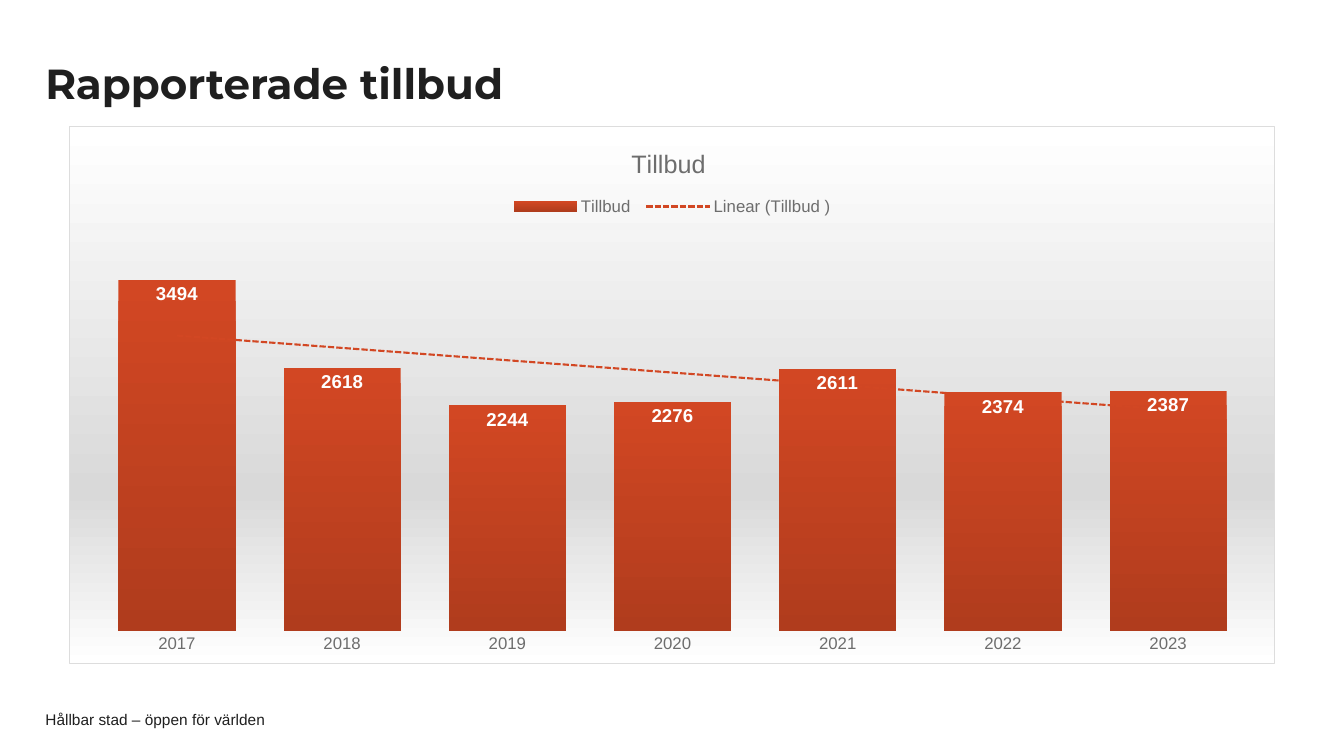
from lxml import etree
from pptx import Presentation
from pptx.chart.data import CategoryChartData
from pptx.dml.color import RGBColor
from pptx.enum.chart import XL_CHART_TYPE, XL_LABEL_POSITION, XL_LEGEND_POSITION, XL_TICK_MARK
from pptx.enum.text import MSO_ANCHOR, PP_ALIGN
from pptx.oxml import parse_xml
from pptx.oxml.ns import nsdecls, qn
from pptx.util import Inches, Pt

COLUMN = XL_CHART_TYPE.COLUMN_CLUSTERED
INSIDE = XL_LABEL_POSITION.INSIDE_END
TOP = XL_LEGEND_POSITION.TOP
NO_TICK = XL_TICK_MARK.NONE
MIDDLE = MSO_ANCHOR.MIDDLE
LEFT = PP_ALIGN.LEFT

WIDTH, HEIGHT = Inches(13.33), Inches(7.5)
MARGIN = 0.45 / 13.33
COLORS = {
    "ink": "1F1F1F", "grey": "6D6D6D", "white": "FFFFFF", "band": "D9D9D9",
    "edge": "DDDDDD", "red": "D24723", "rust": "B03C1D",
}
YEARS = [str(year) for year in range(2017, 2024)]
COUNTS = [3494, 2618, 2244, 2276, 2611, 2374, 2387]
PLOT = {"x": 0.021, "y": 0.191, "w": 0.959, "h": 0.747}


def area(x, y, w, h):
    return [int(part) for part in (x * WIDTH, y * HEIGHT, w * WIDTH, h * HEIGHT)]


def style(font, size, color, name="Arial", bold=False):
    font.size, font.name, font.bold = Pt(size), name, bold
    font.color.rgb = RGBColor.from_string(COLORS[color])


def write(frame, text, pad, *look):
    frame.word_wrap = True
    frame.vertical_anchor = MIDDLE
    frame.margin_left = frame.margin_right = 0
    frame.margin_top = frame.margin_bottom = Inches(pad)
    line = frame.paragraphs[0]
    line.alignment = LEFT
    run = line.add_run()
    run.text = text
    style(run.font, *look)
    return line


def add_title(slide, text):
    title = slide.shapes.title
    title.left, title.top, title.width, title.height = area(MARGIN, 0.059, 0.752, 0.108)
    write(title.text_frame, text, 0.05, 30, "ink", "Montserrat", True).line_spacing = 0.9


def add_footer(slide, text):
    box = slide.shapes.add_textbox(*area(MARGIN, 0.941, 0.709, 0.021))
    write(box.text_frame, text, 0, 11, "ink")


def shade(props, stops):
    marks = "".join(
        f'<a:gs pos="{share * 1000}"><a:srgbClr val="{COLORS[color]}"/></a:gs>'
        for share, color in stops)
    props.append(parse_xml(
        f'<a:gradFill {nsdecls("a")} rotWithShape="1"><a:gsLst>{marks}</a:gsLst>'
        '<a:lin ang="5400000" scaled="0"/></a:gradFill>'))


def stroke(props, color, width, dash="solid"):
    props.append(parse_xml(
        f'<a:ln {nsdecls("a")} w="{Pt(width)}"><a:solidFill>'
        f'<a:srgbClr val="{COLORS[color]}"/></a:solidFill><a:prstDash val="{dash}"/></a:ln>'))


def add_trend(series):
    trend = parse_xml(
        f'<c:trendline {nsdecls("c")}><c:spPr/><c:trendlineType val="linear"/>'
        '<c:dispRSqr val="0"/><c:dispEq val="0"/></c:trendline>')
    stroke(trend[0], "red", 1.5, "sysDash")
    series._element.find(qn("c:cat")).addprevious(trend)


def place_plot(chart):
    plot = chart._chartSpace.find(qn("c:chart")).find(qn("c:plotArea"))
    for old in plot.findall(qn("c:layout")):
        plot.remove(old)
    sizes = "".join(f'<c:{key} val="{share}"/>' for key, share in PLOT.items())
    plot.insert(0, parse_xml(
        f'<c:layout {nsdecls("c")}><c:manualLayout><c:layoutTarget val="inner"/>'
        f'<c:xMode val="edge"/><c:yMode val="edge"/>{sizes}</c:manualLayout></c:layout>'))


def paint_back(chart):
    props = etree.Element(qn("c:spPr"))
    shade(props, [(0, "white"), (68, "band"), (100, "white")])
    stroke(props, "edge", 0.75)
    chart._chartSpace.find(qn("c:chart")).addnext(props)


def set_axes(chart):
    years, counts = chart.category_axis, chart.value_axis
    years.major_tick_mark = years.minor_tick_mark = NO_TICK
    years.format.line.fill.background()
    style(years.tick_labels.font, 12, "grey")
    counts.minimum_scale, counts.maximum_scale = 0, 4000
    counts.has_major_gridlines = False
    counts.visible = False


def set_bars(chart):
    plot = chart.plots[0]
    plot.gap_width = 41
    plot.vary_by_categories = False
    series = plot.series[0]
    shade(series._element.get_or_add_spPr(), [(0, "red"), (100, "rust")])
    labels = series.data_labels
    labels.show_value = True
    labels.position = INSIDE
    style(labels.font, 13.3, "white", bold=True)
    add_trend(series)


def add_chart(slide, name):
    data = CategoryChartData()
    data.categories = YEARS
    data.add_series(name, COUNTS)
    chart = slide.shapes.add_chart(COLUMN, *area(0.051, 0.167, 0.898, 0.712), data).chart
    style(chart.font, 10, "ink")
    chart.has_title = True
    run = chart.chart_title.text_frame.paragraphs[0].add_run()
    run.text = name
    style(run.font, 18, "grey")
    chart.has_legend = True
    chart.legend.position = TOP
    chart.legend.include_in_layout = False
    style(chart.legend.font, 12, "grey")
    set_axes(chart)
    set_bars(chart)
    place_plot(chart)
    paint_back(chart)


def main():
    deck = Presentation()
    deck.slide_width, deck.slide_height = WIDTH, HEIGHT
    slide = deck.slides.add_slide(deck.slide_layouts[5])
    add_footer(slide, "Hållbar stad – öppen för världen")
    add_title(slide, "Rapporterade tillbud")
    add_chart(slide, "Tillbud ")
    deck.save("out.pptx")


if __name__ == "__main__":
    main()
